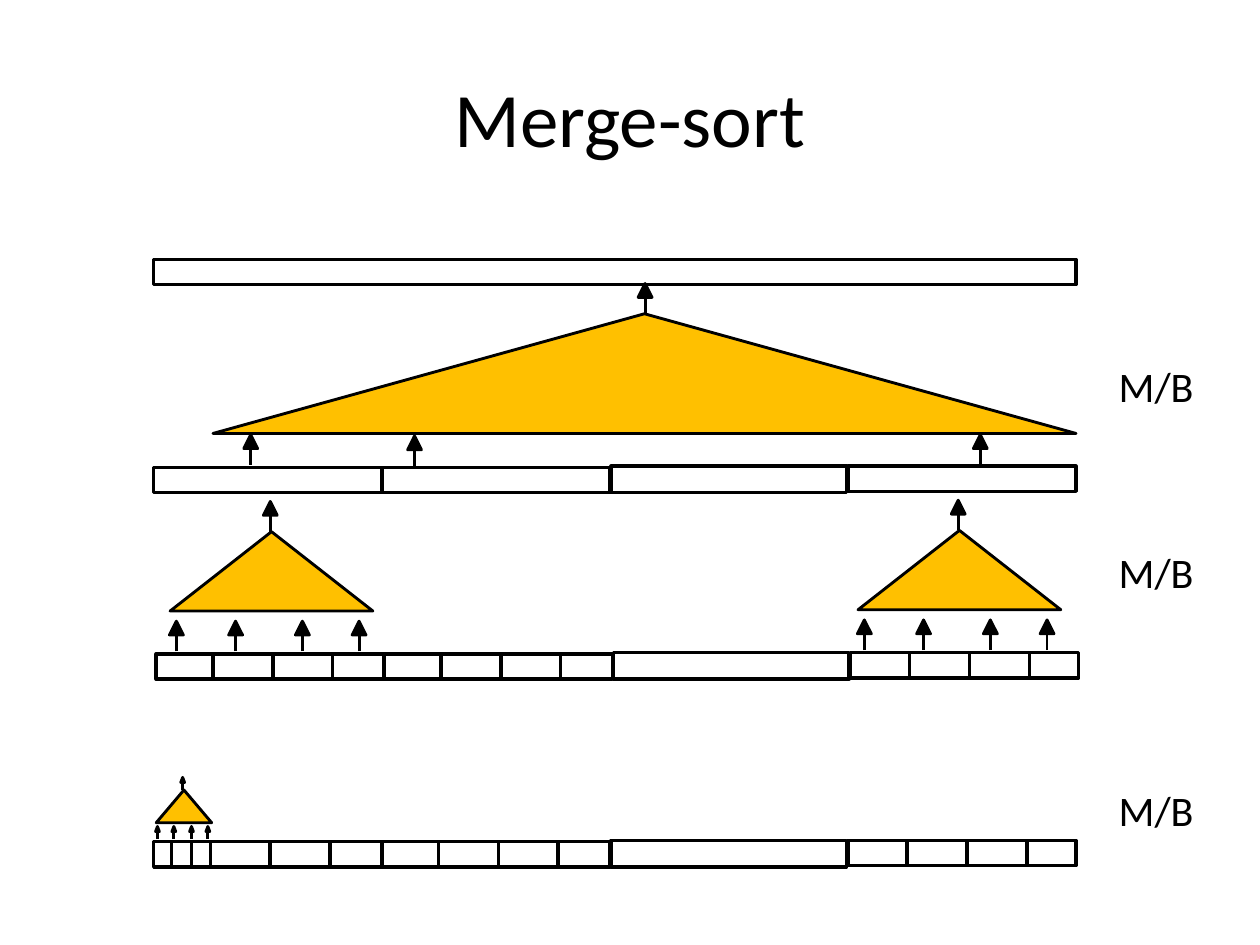
from lxml import etree
from pptx import Presentation
from pptx.dml.color import RGBColor
from pptx.enum.shapes import MSO_CONNECTOR, MSO_SHAPE
from pptx.enum.text import MSO_ANCHOR, MSO_AUTO_SIZE, PP_ALIGN
from pptx.oxml.ns import qn
from pptx.util import Inches, Pt

RECT = MSO_SHAPE.RECTANGLE
LINE = MSO_CONNECTOR.STRAIGHT
MIDDLE = MSO_ANCHOR.MIDDLE
GROW = MSO_AUTO_SIZE.SHAPE_TO_FIT_TEXT
LEFT, CENTER = PP_ALIGN.LEFT, PP_ALIGN.CENTER
INK, GOLD = "000000", "FFC000"
THICK, THIN = 2, 1.63
BIG = {"wide": 0.11, "high": 0.11, "neck": 0.08, "tail": 0.24}
SMALL = {"wide": 0.03, "high": 0.04, "neck": 0.04, "tail": 0.1}


def color(code):
    """Turn a hex string into a colour."""
    return RGBColor.from_string(code)


def apply(target, values):
    """Set each format value on the target."""
    for name, value in values.items():
        setattr(target, name, value)


class Deck:
    """Hold the style and the current slide."""

    def __init__(self, font):
        """Open a deck with one titled slide."""
        self.font = font
        self.show = Presentation()
        apply(self.show, {"slide_width": Inches(10), "slide_height": Inches(7.5)})
        self.slide = self.show.slides.add_slide(self.show.slide_layouts[5])
        self.shapes = self.slide.shapes

    def words(self, frame, text, size, align):
        """Put styled text into a frame."""
        frame.text = text
        par = frame.paragraphs[0]
        par.alignment = align
        font = par.runs[0].font
        apply(font, {"name": self.font, "size": Pt(size)})
        font.color.rgb = color(INK)

    def title(self, text):
        """Fill and place the title."""
        box = self.shapes.title
        apply(box, {"left": Inches(0.5), "top": Inches(0.3),
                    "width": Inches(9), "height": Inches(1.25)})
        self.words(box.text_frame, text, 44, CENTER)
        box.text_frame.vertical_anchor = MIDDLE

    def label(self, text, x, y):
        """Add a text box."""
        box = self.shapes.add_textbox(Inches(x), Inches(y), Inches(1.1), Inches(0.5))
        apply(box.text_frame, {"word_wrap": True, "auto_size": GROW})
        self.words(box.text_frame, text, 24, LEFT)

    def stroke(self, line, width):
        """Ink a line at a width."""
        line.color.rgb = color(INK)
        line.width = Pt(width)

    def bar(self, x, y, w, h=0.2):
        """Add an empty run of data."""
        box = self.shapes.add_shape(RECT, Inches(x), Inches(y), Inches(w), Inches(h))
        box.shadow.inherit = False
        box.fill.background()
        self.stroke(box.line, THICK)

    def rule(self, x, start, end, width):
        """Add an upright line."""
        line = self.shapes.add_connector(
            LINE, Inches(x), Inches(start), Inches(x), Inches(end))
        self.stroke(line.line, width)
        etree.SubElement(line._element.spPr, qn("a:effectLst"))

    def wedge(self, x, y, w, h, fill):
        """Add a triangle with its tip at the top."""
        pen = self.shapes.build_freeform(Inches(x + w / 2), Inches(y))
        pen.add_line_segments([(Inches(x), Inches(y + h)),
                               (Inches(x + w), Inches(y + h))], close=True)
        shape = pen.convert_to_shape()
        shape.shadow.inherit = False
        shape.fill.solid()
        shape.fill.fore_color.rgb = color(fill)
        self.stroke(shape.line, THIN)

    def arrow(self, x, tip, size=BIG):
        """Add an arrow that points up to its tip."""
        self.rule(x, tip + size["tail"], tip + size["neck"], THIN)
        self.wedge(x - size["wide"] / 2, tip, size["wide"], size["high"], INK)

    def split(self, x, y, gap=0.45):
        """Cut a run into four parts."""
        for part in range(3):
            self.rule(x + gap + 0.475 * part, y + 0.01, y + 0.2, THICK)

    def merge(self, x, y, w, h, feet, drop, size):
        """Add a merge step with its arrows."""
        self.wedge(x, y, w, h, GOLD)
        self.arrow(x + w / 2 - 0.01, y - size["tail"], size)
        for foot in feet:
            self.arrow(x + foot, y + drop, size)


def main():
    """Build and save the slide."""
    deck = Deck("Calibri")
    deck.title("Merge-sort")
    deck.bar(1.22, 2.06, 7.32)
    deck.wedge(1.69, 2.49, 6.85, 0.95, GOLD)
    for x, tip in ((1.99, 3.45), (3.29, 3.46), (7.78, 3.45), (5.12, 2.25)):
        deck.arrow(x, tip)

    for x, y, cut in ((1.22, 3.71, False), (1.24, 5.19, True), (1.22, 6.68, True)):
        for step, gap in ((0, 0.45), (1.81, 0.45), (5.51, 0.47)):
            top = y - 0.01 if step == 5.51 else y
            deck.bar(x + step, top, 1.81)
            if cut:
                deck.split(x + step, top, gap)
        deck.bar(x + 3.63, y - 0.01, 1.87, 0.21)
    for x in (1.36, 1.52):
        deck.rule(x, 6.68, 6.87, THICK)

    for x, y in ((1.35, 4.22), (6.81, 4.21)):
        deck.merge(x, y, 1.61, 0.63, (0.05, 0.52, 1.05, 1.5), 0.71, BIG)
    deck.merge(1.24, 6.27, 0.44, 0.26, (0.01, 0.14, 0.28, 0.41), 0.29, SMALL)

    for y in (2.81, 4.29, 6.18):
        deck.label("M/B", 8.78, y)
    deck.show.save("out.pptx")


if __name__ == "__main__":
    main()
